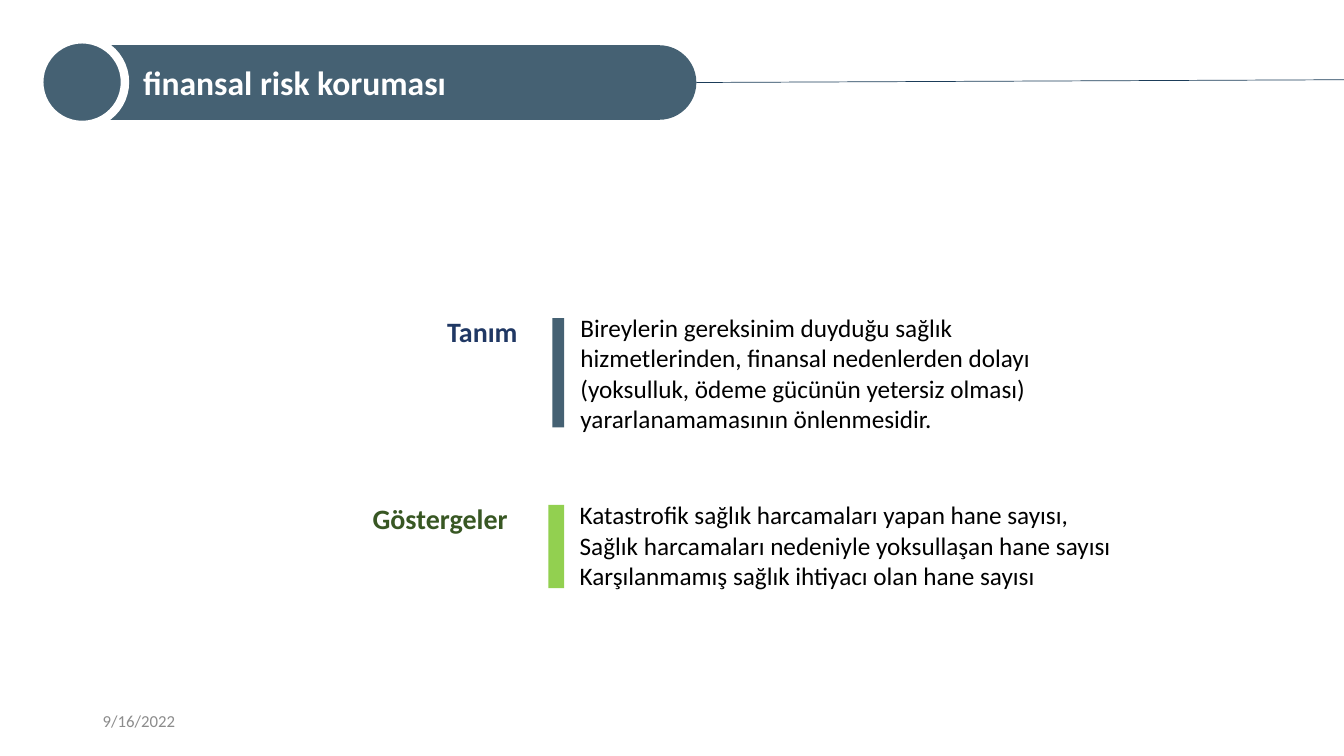
from dataclasses import dataclass

from lxml import etree
from pptx import Presentation
from pptx.dml.color import RGBColor
from pptx.enum import shapes, text
from pptx.oxml import ns
from pptx.util import Cm, Pt

SLATE = "456173"
WHITE = "FFFFFF"


@dataclass
class Box:
    left: float
    top: float
    width: float
    height: float


@dataclass
class Style:
    size: float
    color: str
    bold: bool = False


@dataclass
class Section:
    label: str
    label_box: Box
    label_color: str
    bar_box: Box
    bar_color: str
    body: str
    body_box: Box


BODY_STYLE = Style(18, "000000")

SECTIONS = [
    Section(
        "Tanım", Box(11.02, 7.8, 2.8, 1.12), "203864",
        Box(13.92, 8.02, 0.3, 2.75), SLATE,
        "Bireylerin gereksinim duyduğu sağlık hizmetlerinden, finansal "
        "nedenlerden dolayı (yoksulluk, ödeme gücünün yetersiz olması) "
        "yararlanamamasının önlenmesidir.",
        Box(14.38, 7.75, 13.95, 3.33),
    ),
    Section(
        "Göstergeler", Box(9.14, 12.52, 4.68, 1.12), "385723",
        Box(13.82, 12.72, 0.4, 2.1), "92D050",
        "Katastrofik sağlık harcamaları yapan hane sayısı,\n"
        "Sağlık harcamaları nedeniyle yoksullaşan hane sayısı\n"
        "Karşılanmamış sağlık ihtiyacı olan hane sayısı",
        Box(14.36, 12.47, 14.2, 2.57),
    ),
]


def rgb(color: str) -> RGBColor:
    return RGBColor.from_string(color)


def lengths(box: Box) -> tuple:
    return Cm(box.left), Cm(box.top), Cm(box.width), Cm(box.height)


def write(shape, words: str, style: Style, anchor=text.MSO_ANCHOR.TOP) -> None:
    frame = shape.text_frame
    frame.word_wrap = True
    frame.vertical_anchor = anchor
    frame.text = words
    for para in frame.paragraphs:
        para.alignment = text.PP_ALIGN.LEFT
        for span in para.runs:
            span.font.name = "Calibri"
            span.font.size = Pt(style.size)
            span.font.bold = style.bold
            span.font.color.rgb = rgb(style.color)


def add_block(page, kind, box: Box, color: str):
    block = page.shapes.add_shape(kind, *lengths(box))
    block.shadow.inherit = False
    block.fill.solid()
    block.fill.fore_color.rgb = rgb(color)
    block.line.fill.background()
    return block


def add_text(page, box: Box, words: str, style: Style, anchor=text.MSO_ANCHOR.TOP) -> None:
    write(page.shapes.add_textbox(*lengths(box)), words, style, anchor)


def add_header(page, page_width: int) -> None:
    pill = add_block(page, shapes.MSO_SHAPE.ROUNDED_RECTANGLE, Box(1.73, 1.14, 15.82, 1.88), SLATE)
    pill.adjustments[0] = 0.5
    write(pill, "finansal risk koruması", Style(24, WHITE, True), text.MSO_ANCHOR.MIDDLE)
    pill.text_frame.margin_left = Cm(1.6)

    circle = add_block(page, shapes.MSO_SHAPE.OVAL, Box(0.99, 0.99, 2.16, 2.16), SLATE)
    circle.line.color.rgb = rgb(WHITE)
    circle.line.width = Pt(6)

    rule = page.shapes.add_connector(
        shapes.MSO_CONNECTOR.STRAIGHT, Cm(17.55), Cm(2.08), page_width, Cm(2.01)
    )
    rule.begin_connect(pill, 3)
    rule.line.color.rgb = rgb("1B3C59")
    rule.line.width = Pt(0.5)
    etree.SubElement(rule._element.spPr, ns.qn("a:effectLst"))


def add_section(page, section: Section) -> None:
    add_text(page, section.body_box, section.body, BODY_STYLE)
    add_block(page, shapes.MSO_SHAPE.RECTANGLE, section.bar_box, section.bar_color)
    add_text(page, section.label_box, section.label, Style(20, section.label_color, True))


def main() -> None:
    deck = Presentation()
    deck.slide_width = Cm(33.87)
    deck.slide_height = Cm(19.05)
    page = deck.slides.add_slide(deck.slide_layouts[6])
    add_header(page, deck.slide_width)
    add_text(page, Box(2.34, 17.65, 7.62, 1.02), "9/16/2022", Style(12, "8C8C8C"), text.MSO_ANCHOR.MIDDLE)
    for section in SECTIONS:
        add_section(page, section)
    deck.save("out.pptx")


if __name__ == "__main__":
    main()
